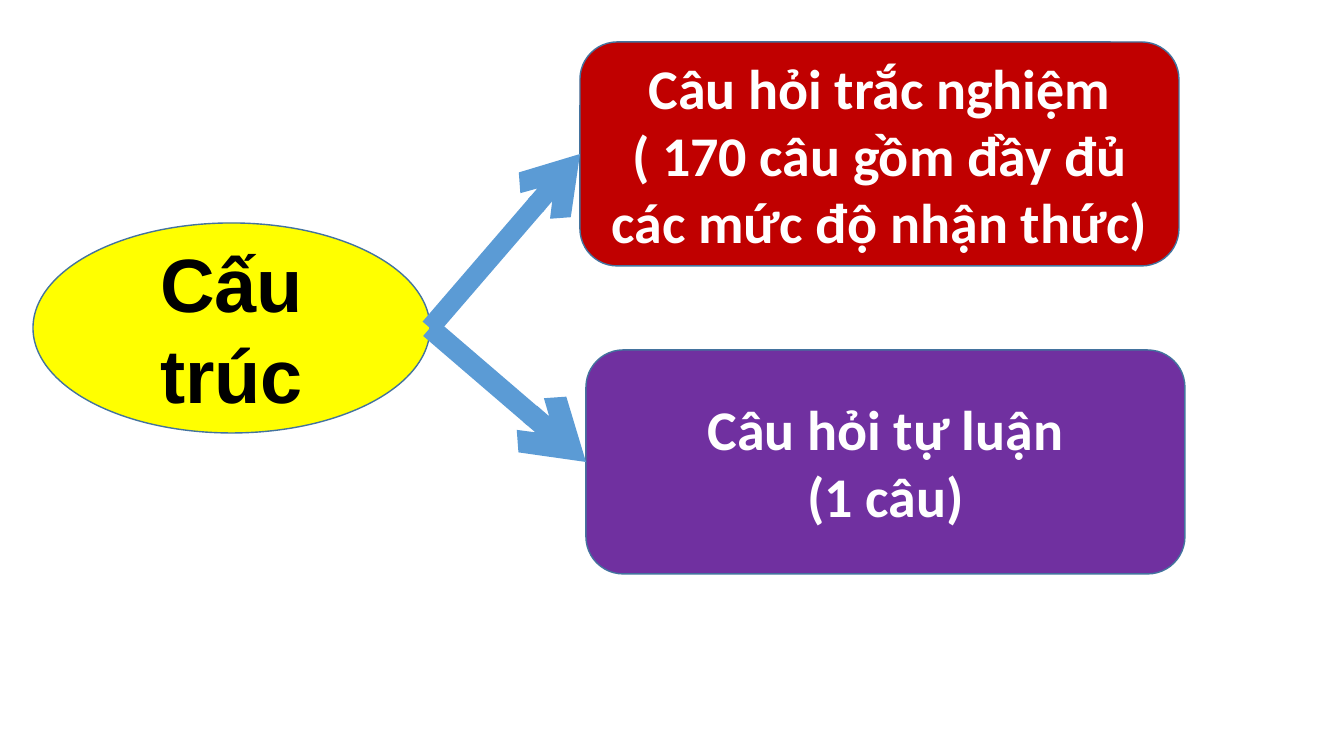
from dataclasses import dataclass

from lxml.etree import SubElement
from pptx import Presentation
from pptx.dml.color import RGBColor
from pptx.enum.shapes import MSO_CONNECTOR as Link, MSO_SHAPE as Preset
from pptx.enum.text import MSO_ANCHOR as Anchor, PP_ALIGN as Align
from pptx.oxml.ns import qn
from pptx.shapes.autoshape import Shape
from pptx.shapes.connector import Connector
from pptx.slide import Slide
from pptx.util import Emu, Pt

EMU_PER_PX = 914400 / 100.8
LEFT_SIDE = 1
COLORS = {
    "yellow": "FFFF00",
    "red": "C00000",
    "purple": "7030A0",
    "outline": "43739E",
    "arrow": "5B9BD5",
    "black": "000000",
    "white": "FFFFFF",
}


@dataclass(frozen=True)
class Node:
    preset: Preset
    left: int
    top: int
    width: int
    height: int
    fill: str
    lines: tuple[str, ...]
    font: str = "Calibri"
    size: int = 40
    ink: str = "white"


@dataclass(frozen=True)
class Branch:
    node: Node
    arrow_weight: int


STRUCTURE = Node(Preset.OVAL, 33, 223, 397, 210, "yellow", ("Cấu trúc",), "Arial", 54, "black")
MULTIPLE_CHOICE = Node(
    Preset.ROUNDED_RECTANGLE, 580, 42, 599, 224, "red",
    ("Câu hỏi trắc nghiệm", "( 170 câu gồm đầy đủ các mức độ nhận thức)"),
)
ESSAY = Node(
    Preset.ROUNDED_RECTANGLE, 586, 350, 599, 224, "purple",
    ("Câu hỏi tự luận", "(1 câu)"),
)
BRANCHES = (Branch(ESSAY, 15), Branch(MULTIPLE_CHOICE, 14))


def px(length: int) -> Emu:
    return Emu(round(length * EMU_PER_PX))


def color(name: str) -> RGBColor:
    return RGBColor.from_string(COLORS[name])


def draw_node(slide: Slide, node: Node) -> Shape:
    shape = slide.shapes.add_shape(
        node.preset, px(node.left), px(node.top), px(node.width), px(node.height)
    )
    shape.shadow.inherit = False
    shape.fill.solid()
    shape.fill.fore_color.rgb = color(node.fill)
    shape.line.color.rgb = color("outline")
    shape.line.width = Pt(1)
    frame = shape.text_frame
    frame.word_wrap = True
    frame.vertical_anchor = Anchor.MIDDLE
    for index, line in enumerate(node.lines):
        paragraph = frame.add_paragraph() if index else frame.paragraphs[0]
        paragraph.alignment = Align.CENTER
        run = paragraph.add_run()
        run.text = line
        run.font.name = node.font
        run.font.size = Pt(node.size)
        run.font.bold = True
        run.font.color.rgb = color(node.ink)
    return shape


def draw_arrow(slide: Slide, source: Node, target: Shape, weight: int) -> Connector:
    start_x = px(source.left + source.width)
    start_y = px(source.top + source.height // 2)
    arrow = slide.shapes.add_connector(Link.STRAIGHT, start_x, start_y, start_x, start_y)
    arrow.end_connect(target, LEFT_SIDE)
    arrow.line.color.rgb = color("arrow")
    arrow.line.width = Pt(weight)
    SubElement(arrow.line._get_or_add_ln(), qn("a:tailEnd"), type="arrow")
    SubElement(arrow._element.spPr, qn("a:effectLst"))
    return arrow


def main() -> None:
    deck = Presentation()
    deck.slide_width, deck.slide_height = px(1344), px(756)
    slide = deck.slides.add_slide(deck.slide_layouts[6])
    draw_node(slide, STRUCTURE)
    boxes = {node: draw_node(slide, node) for node in (MULTIPLE_CHOICE, ESSAY)}
    for branch in BRANCHES:
        draw_arrow(slide, STRUCTURE, boxes[branch.node], branch.arrow_weight)
    deck.save("out.pptx")


if __name__ == "__main__":
    main()
